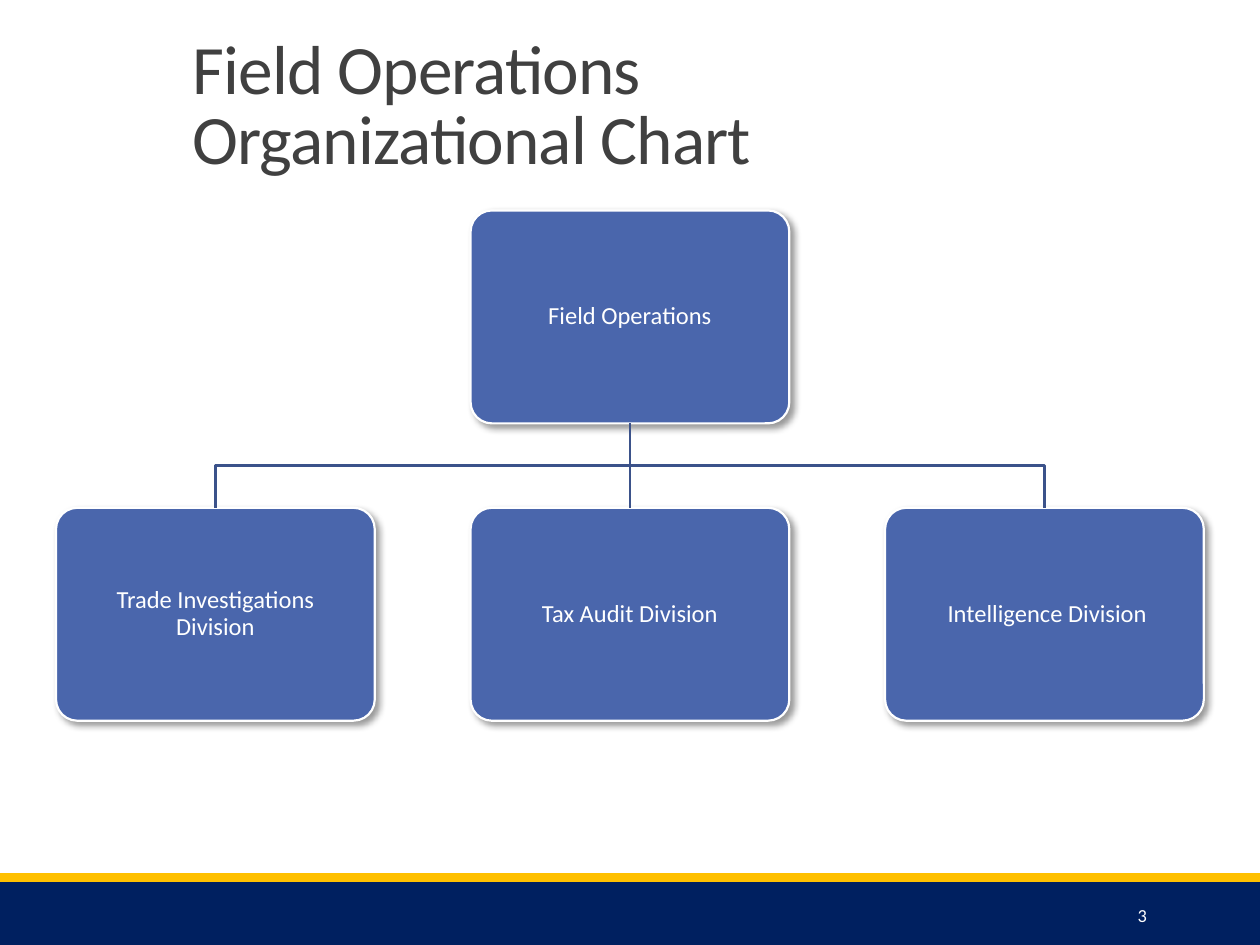
import pptx
import pptx.dml.color
import pptx.enum.shapes
import pptx.enum.text
import pptx.oxml
import pptx.oxml.ns
import pptx.util
from pptx.util import Inches

ALIGN = pptx.enum.text.PP_ALIGN
ANCHOR = pptx.enum.text.MSO_ANCHOR
SHAPE = pptx.enum.shapes.MSO_SHAPE
qn = pptx.oxml.ns.qn


def rgb(value):
    return pptx.dml.color.RGBColor.from_string(value)


def write(frame, text, size, color, align, anchor):
    frame.word_wrap = True
    frame.vertical_anchor = anchor
    paragraph = frame.paragraphs[0]
    paragraph.text = text
    paragraph.alignment = align
    paragraph.font.name = "Calibri"
    paragraph.font.size = pptx.util.Pt(size)
    paragraph.font.color.rgb = rgb(color)
    return paragraph


prs = pptx.Presentation()
prs.slide_width, prs.slide_height = Inches(10), Inches(7.5)
slide = prs.slides.add_slide(prs.slide_layouts[6])
shapes = slide.shapes

for top, height, color in [(7, 0.5, "002060"), (6.93, 0.07, "FFC000")]:
    band = shapes.add_shape(SHAPE.RECTANGLE, 0, Inches(top), prs.slide_width, Inches(height))
    band.shadow.inherit = False
    band.fill.solid()
    band.fill.fore_color.rgb = rgb(color)
    band.line.fill.background()

title = shapes.add_textbox(Inches(1.43), Inches(0.31), Inches(7.72), Inches(1.16))
heading = write(title.text_frame, "Field Operations\vOrganizational Chart", 39.6, "404040",
                ALIGN.LEFT, ANCHOR.BOTTOM)
heading.line_spacing = 0.85
heading._p.pPr.find(qn("a:defRPr")).set("spc", "-50")

box_width, box_height = 2.53, 1.69
center, column_step = 5, 3.29
office_top, division_top = 1.67, 4.03
office_bottom = office_top + box_height
branch_y = (office_bottom + division_top) / 2

units = [
    ("Field Operations", 0, office_top),
    ("Trade Investigations Division", -1, division_top),
    ("Tax Audit Division", 0, division_top),
    (" Intelligence Division", 1, division_top),
]
boxes = []
for unit, column, top in units:
    left = center + column * column_step - box_width / 2
    box = shapes.add_shape(SHAPE.ROUNDED_RECTANGLE, Inches(left), Inches(top),
                           Inches(box_width), Inches(box_height))
    box.adjustments[0] = 0.1
    box.fill.solid()
    box.fill.fore_color.rgb = rgb("4A66AC")
    box.line.color.rgb = rgb("FFFFFF")
    box.line.width = pptx.util.Pt(1.25)
    box.shadow.inherit = False
    box._element.spPr.find(qn("a:effectLst")).append(pptx.oxml.parse_xml(
        f'<a:outerShdw {pptx.oxml.ns.nsdecls("a")} blurRad="50800" dist="38100" dir="2700000" '
        'algn="tl" rotWithShape="0"><a:srgbClr val="000000"><a:alpha val="40000"/></a:srgbClr>'
        '</a:outerShdw>'))
    frame = box.text_frame
    frame.margin_left = frame.margin_right = Inches(0.11)
    frame.margin_top = frame.margin_bottom = Inches(0.11)
    write(frame, unit, 14, "FFFFFF", ALIGN.CENTER, ANCHOR.MIDDLE).line_spacing = 0.9
    boxes.append(box)

office, _, tax_audit, _ = boxes
stem = shapes.add_connector(pptx.enum.shapes.MSO_CONNECTOR.STRAIGHT, Inches(center),
                            Inches(office_bottom), Inches(center), Inches(division_top))
stem.begin_connect(office, 2)
stem.end_connect(tax_audit, 0)
links = [stem]
for side in (-1, 1):
    end_x = Inches(center + side * column_step)
    outline = shapes.build_freeform(Inches(center), Inches(office_bottom))
    outline.add_line_segments([(Inches(center), Inches(branch_y)), (end_x, Inches(branch_y)),
                               (end_x, Inches(division_top))], close=False)
    branch = outline.convert_to_shape()
    branch.fill.background()
    links.append(branch)
for link in links:
    link.line.color.rgb = rgb("3B528A")
    link.line.width = pptx.util.Pt(1.25)
    link._element.spPr.append(pptx.oxml.parse_xml(f'<a:effectLst {pptx.oxml.ns.nsdecls("a")}/>'))

page_number = shapes.add_textbox(Inches(8.12), Inches(7.06), Inches(1.08), Inches(0.4))
write(page_number.text_frame, "3", 10.5, "FFFFFF", ALIGN.RIGHT, ANCHOR.MIDDLE)

prs.save("out.pptx")
